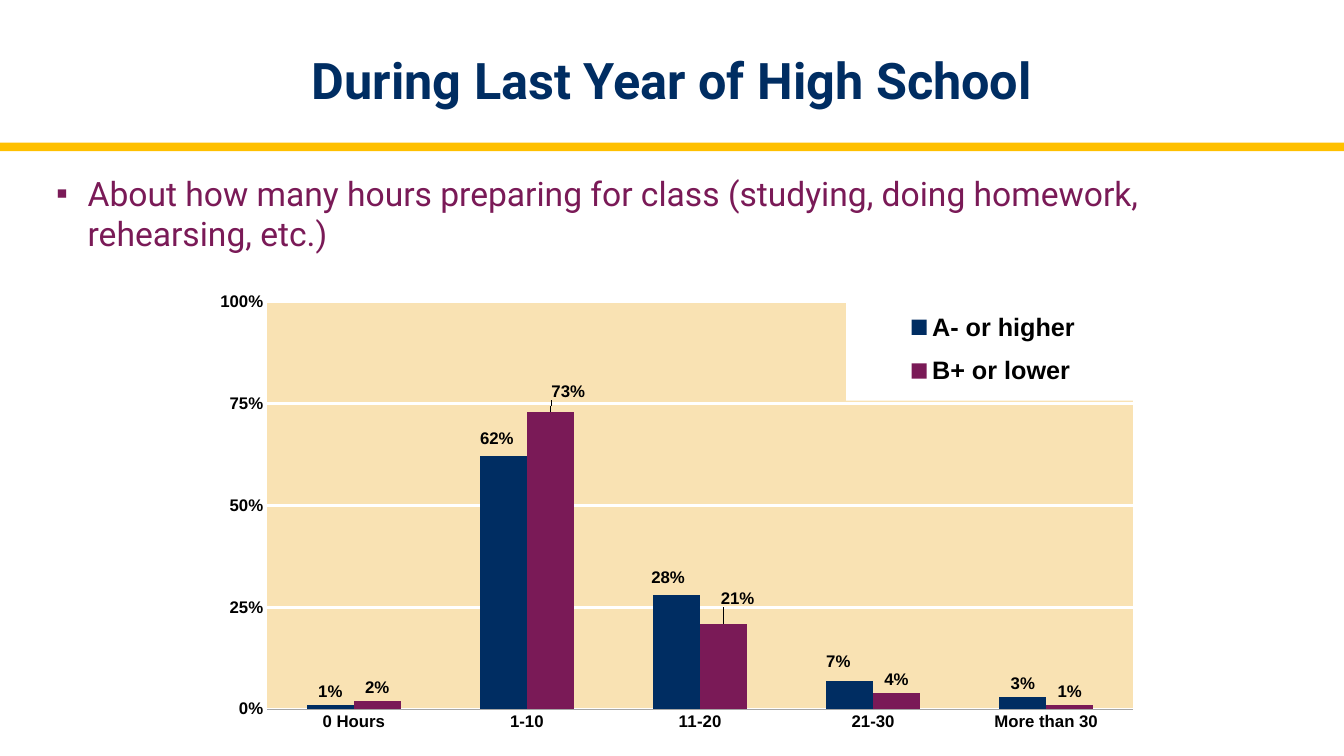
from lxml import etree
from pptx import Presentation
from pptx.chart.data import CategoryChartData
from pptx.dml.color import RGBColor
from pptx.enum import chart as charts, shapes, text
from pptx.oxml import ns
from pptx.util import Pt

NAVY = RGBColor(0x00, 0x2D, 0x62)
PLUM = RGBColor(0x7A, 0x1A, 0x57)
GOLD = RGBColor(0xFF, 0xC0, 0x00)
SAND = RGBColor(0xEF, 0xAA, 0x22)
GRAY = RGBColor(0xA6, 0xA6, 0xA6)
BLACK = RGBColor(0, 0, 0)
WHITE = RGBColor(255, 255, 255)

HOURS = ["0 Hours", "1-10", "11-20", "21-30", "More than 30"]
# Name, colour, values, label shifts by point (fractions of the chart size)
GRADES = [
    ("A- or higher", NAVY, [0.01, 0.62, 0.28, 0.07, 0.03],
     {1: (-0.007, -0.011), 2: (-0.009, -0.009), 3: (-0.012, -0.013)}),
    ("B+ or lower", PLUM, [0.02, 0.73, 0.21, 0.04, 0.01],
     {1: (0.019, -0.015), 2: (0.015, -0.026)}),
]


def set_font(font, size=12, color=BLACK, name="Arial", bold=True):
    font.size, font.name, font.bold = Pt(size), name, bold
    font.color.rgb = color


def write(paragraph, content, align=text.PP_ALIGN.LEFT, **style):
    paragraph.alignment = align
    run = paragraph.add_run()
    run.text = content
    set_font(run.font, **style)


def add_child(parent, tag, **attributes):
    return etree.SubElement(parent, ns.qn(tag), attributes)


def manual_layout(inner=False, edge=False, **places):
    layout = etree.Element(ns.qn("c:layout"))
    manual = add_child(layout, "c:manualLayout")
    if inner:
        add_child(manual, "c:layoutTarget", val="inner")
    if edge:
        add_child(manual, "c:xMode", val="edge")
        add_child(manual, "c:yMode", val="edge")
    for key, value in places.items():
        add_child(manual, f"c:{key}", val=str(value))
    return layout


def fill_element(color, alpha=100):
    properties = etree.Element(ns.qn("c:spPr"))
    solid = add_child(properties, "a:solidFill")
    tint = add_child(solid, "a:srgbClr", val=str(color))
    add_child(tint, "a:alpha", val=str(alpha * 1000))
    return properties


class SlideBuilder:
    font = "Roboto"

    def __init__(self, presentation):
        self.slide = presentation.slides.add_slide(presentation.slide_layouts[5])

    def title(self, content, left, top, width, height):
        shape = self.slide.shapes.title
        shape.left, shape.top, shape.width, shape.height = map(Pt, (left, top, width, height))
        shape.text_frame.vertical_anchor = text.MSO_ANCHOR.MIDDLE
        write(shape.text_frame.paragraphs[0], content, text.PP_ALIGN.CENTER,
              size=36, color=NAVY, name=self.font)

    def bar(self, color, *box):
        shape = self.slide.shapes.add_shape(shapes.MSO_SHAPE.RECTANGLE, *map(Pt, box))
        shape.shadow.inherit = False
        shape.fill.solid()
        shape.fill.fore_color.rgb = color
        shape.line.fill.background()

    def bullet(self, content, *box):
        frame = self.slide.shapes.add_textbox(*map(Pt, box)).text_frame
        frame.word_wrap = True
        paragraph = frame.paragraphs[0]
        properties = paragraph._p.get_or_add_pPr()
        properties.set("marL", str(Pt(31.5)))
        properties.set("indent", str(Pt(-22.5)))
        add_child(add_child(properties, "a:buClr"), "a:srgbClr", val=str(PLUM))
        add_child(properties, "a:buFont", typeface="Arial")
        add_child(properties, "a:buChar", char="▪")
        write(paragraph, content, size=24, color=PLUM, name=self.font, bold=False)

    def column_chart(self, *box):
        data = CategoryChartData(number_format="0%")
        data.categories = HOURS
        for name, _, values, _ in GRADES:
            data.add_series(name, values)
        chart = self.slide.shapes.add_chart(
            charts.XL_CHART_TYPE.COLUMN_CLUSTERED, *map(Pt, box), data).chart
        chart.has_title = False
        set_font(chart.font)
        plot = chart.plots[0]
        plot.gap_width, plot.overlap, plot.vary_by_categories = 170, 0, False
        for series, (_, color, _, shifts) in zip(plot.series, GRADES):
            self.format_series(series, color, shifts)
        self.format_axes(chart)
        self.format_legend(chart)

        # Plot area
        area = chart._chartSpace.chart.plotArea
        for old in area.findall(ns.qn("c:layout")):
            area.remove(old)
        area.insert(0, manual_layout(inner=True, edge=True, x=0.078, y=0.034, w=0.912, h=0.872))
        area.append(fill_element(SAND, 34))

    def format_series(self, series, color, shifts):
        series.format.fill.solid()
        series.format.fill.fore_color.rgb = color
        series.invert_if_negative = False
        labels = series.data_labels
        labels.show_value = True
        labels.number_format, labels.number_format_is_linked = "0%", False
        labels.position = charts.XL_LABEL_POSITION.OUTSIDE_END
        set_font(labels.font)
        for index, (x, y) in shifts.items():
            label = series.points[index].data_label
            set_font(label.font)
            label.position = charts.XL_LABEL_POSITION.OUTSIDE_END
            element = labels._element.xpath(f"c:dLbl[c:idx/@val='{index}']")[0]
            element.insert(1, manual_layout(x=x, y=y))

    def format_axes(self, chart):
        for axis in (chart.category_axis, chart.value_axis):
            axis.major_tick_mark = axis.minor_tick_mark = charts.XL_TICK_MARK.NONE
            set_font(axis.tick_labels.font)
        line = chart.category_axis.format.line
        line.color.rgb, line.width = GRAY, Pt(0.55)
        axis = chart.value_axis
        axis.minimum_scale, axis.maximum_scale, axis.major_unit = 0, 1, 0.25
        axis.tick_labels.number_format = "0%"
        axis.tick_labels.number_format_is_linked = False
        axis.format.line.fill.background()
        grid = axis.major_gridlines.format.line
        grid.color.rgb, grid.width = WHITE, Pt(2.25)

    def format_legend(self, chart):
        chart.has_legend = True
        legend = chart.legend
        legend.position = charts.XL_LEGEND_POSITION.CORNER
        legend.include_in_layout = False
        set_font(legend.font, size=18)
        element = legend._element
        for old in element.findall(ns.qn("c:layout")):
            element.remove(old)
        element.find(ns.qn("c:legendPos")).addnext(
            manual_layout(edge=True, x=0.688, y=0.026, w=0.31, h=0.22))
        element.find(ns.qn("c:txPr")).addprevious(fill_element(WHITE))


def main():
    presentation = Presentation()
    presentation.slide_width, presentation.slide_height = Pt(960), Pt(540)
    builder = SlideBuilder(presentation)

    # Heading
    builder.bar(GOLD, 0, 102, 960, 6)
    builder.title("During Last Year of High School", 32, 18, 896, 78)

    # Question
    builder.bullet("About how many hours preparing for class "
                   "(studying, doing homework, rehearsing, etc.)", 24, 120, 904, 150)

    # Hours by grade
    builder.column_chart(138, 204, 678, 334)
    presentation.save("out.pptx")


if __name__ == "__main__":
    main()
